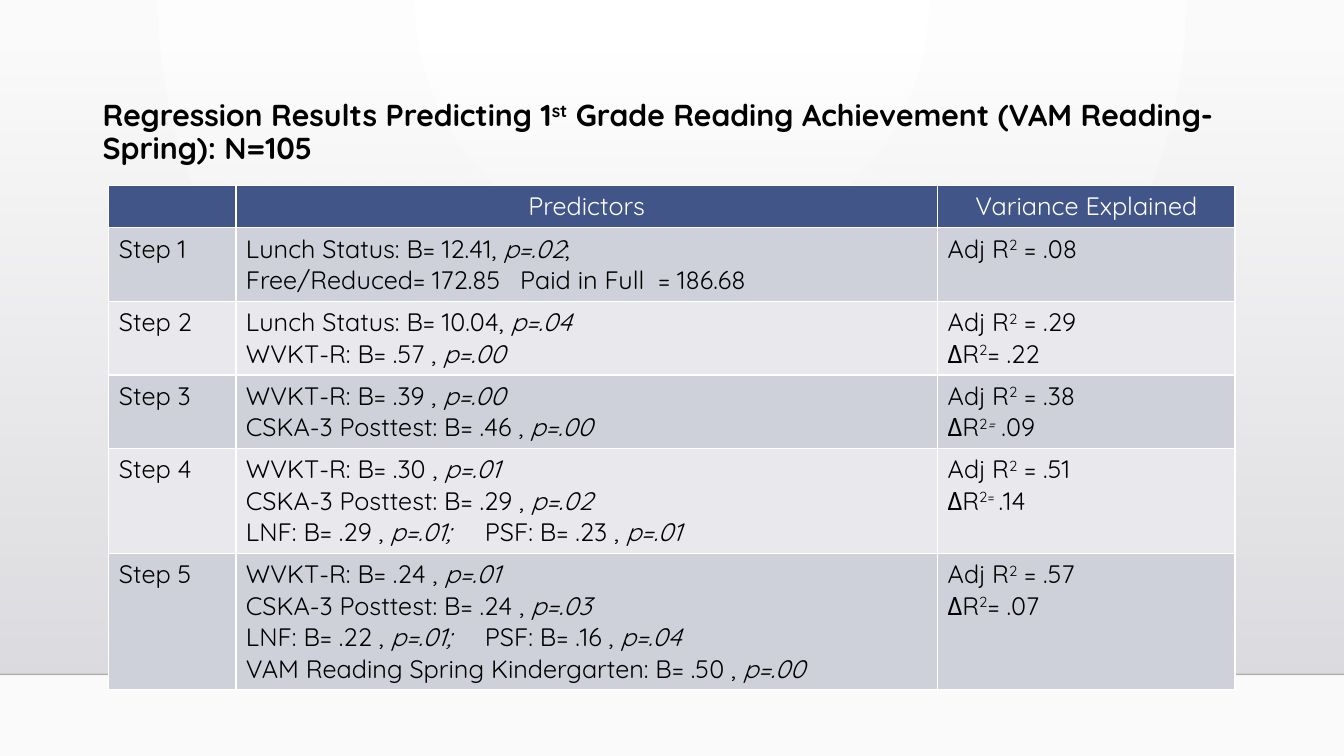
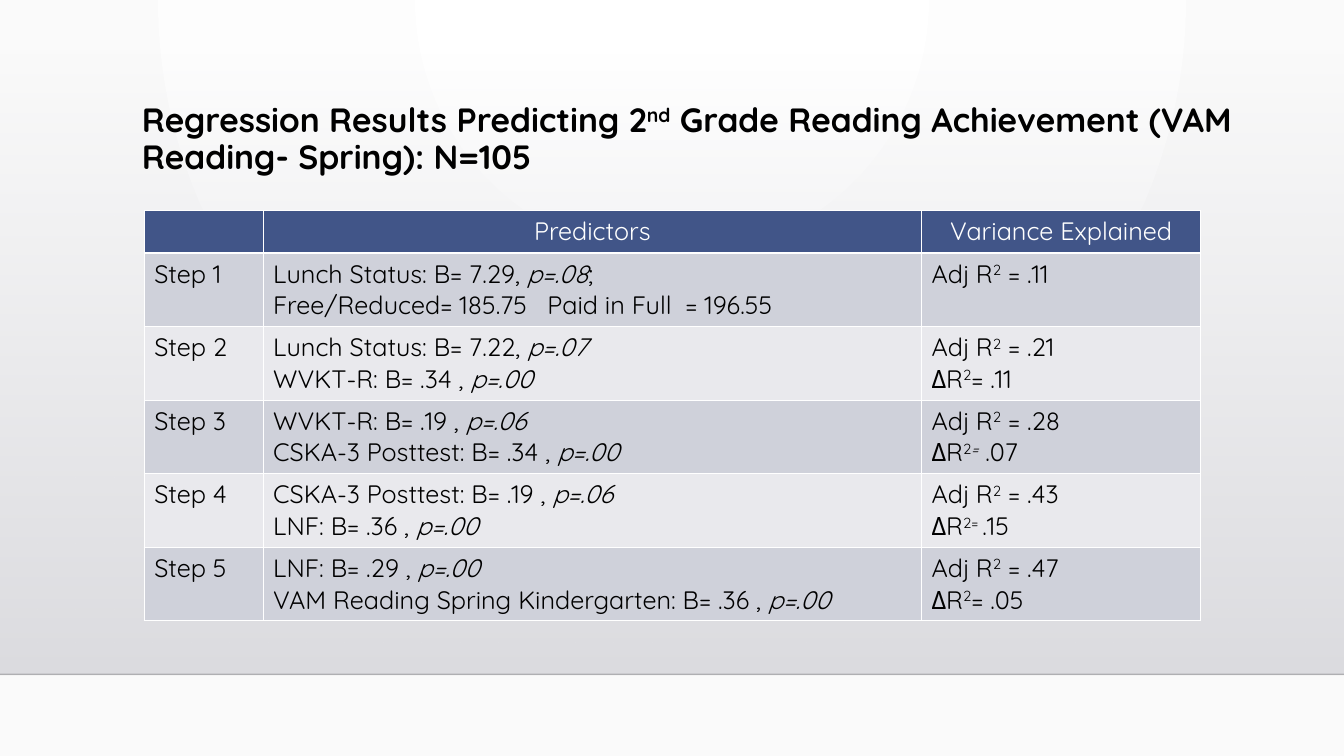
from dataclasses import dataclass

from lxml import etree
from pptx import Presentation
from pptx.dml.color import RGBColor
from pptx.dml.fill import FillFormat
from pptx.enum.shapes import MSO_CONNECTOR, MSO_SHAPE
from pptx.enum.text import MSO_ANCHOR, PP_ALIGN
from pptx.oxml.ns import qn
from pptx.slide import Slide
from pptx.table import _Cell
from pptx.text.text import TextFrame
from pptx.util import Inches, Pt

RECTANGLE = MSO_SHAPE.RECTANGLE
STRAIGHT = MSO_CONNECTOR.STRAIGHT
TOP = MSO_ANCHOR.TOP
LEFT, CENTER = PP_ALIGN.LEFT, PP_ALIGN.CENTER


@dataclass(frozen=True)
class Theme:
    font: str = "Quicksand"
    table_size: float = 18
    text: str = "000000"
    white: str = "FFFFFF"
    background_end: str = "FAFAFA"
    band_start: str = "DCDCE0"
    band_end: str = "DEDEE2"
    floor_line: str = "000001"
    header: str = "415588"
    row_fills: tuple[str, str] = ("CFD1DA", "E9E9ED")


@dataclass(frozen=True)
class Step:
    predictors: tuple[str, ...]
    variance: tuple[str, ...]


@dataclass(frozen=True)
class ResultsSlide:
    title: str
    title_size: float
    title_left: float
    title_top: float
    table_left: float
    table_top: float
    columns: tuple[float, float, float]
    steps: tuple[Step, ...]


THEME = Theme()
SLIDE_WIDTH, SLIDE_HEIGHT = 13.33, 7.5
BAND_TOP, FLOOR = 0.51, 6.69
TITLE_WIDTH, TITLE_HEIGHT = 11.5, 0.82
CELL_PADDING, LINE_HEIGHT = 0.11, 0.31
TAB_STOPS = (2.37, 2.72)
HEADINGS = ("", "Predictors", "Variance Explained")

# In texts, *…* is italic and ^…^ is superscript.
RESULTS = (
    ResultsSlide(
        "Regression Results Predicting 1^st^ Grade Reading Achievement "
        "(VAM Reading- Spring): N=105",
        21.6, 0.92, 0.95, 1.08, 1.84, (1.26, 6.96, 2.95),
        (
            Step(("Lunch Status: B= 12.41, *p=.02*;",
                  "Free/Reduced= 172.85\tPaid in Full  = 186.68"),
                 ("Adj R^2^ = .08",)),
            Step(("Lunch Status: B= 10.04, *p=.04*", "WVKT-R: B= .57 , *p=.00*"),
                 ("Adj R^2^ = .29", "ΔR^2^= .22")),
            Step(("WVKT-R: B= .39 , *p=.00*", "CSKA-3 Posttest: B= .46 , *p=.00*"),
                 ("Adj R^2^ = .38", "ΔR^2^*^=^* .09")),
            Step(("WVKT-R: B= .30 , *p=.01*", "CSKA-3 Posttest: B= .29 , *p=.02*",
                  "LNF: B= .29 , *p=.01;*\tPSF: B= .23 , *p=.01*"),
                 ("Adj R^2^ = .51", "ΔR^2= ^.14")),
            Step(("WVKT-R: B= .24 , *p=.01*", "CSKA-3 Posttest: B= .24 , *p=.03*",
                  "LNF: B= .22 , *p=.01;*\tPSF: B= .16 , *p=.04*",
                  "VAM Reading Spring Kindergarten: B= .50 , *p=.00*"),
                 ("Adj R^2^ = .57", "ΔR^2^= .07")),
        ),
    ),
    ResultsSlide(
        "Regression Results Predicting 2^nd^ Grade Reading Achievement "
        "(VAM Reading- Spring): N=105",
        24, 1.31, 0.98, 1.43, 2.09, (1.18, 6.53, 2.77),
        (
            Step(("Lunch Status: B= 7.29, *p=.08*;",
                  "Free/Reduced= 185.75\tPaid in Full  = 196.55"),
                 ("Adj R^2^ = .11",)),
            Step(("Lunch Status: B= 7.22, *p=.07*", "WVKT-R: B= .34 , *p=.00*"),
                 ("Adj R^2^ = .21", "ΔR^2^= .11")),
            Step(("WVKT-R: B= .19 , *p=.06*", "CSKA-3 Posttest: B= .34 , *p=.00*"),
                 ("Adj R^2^ = .28", "ΔR^2^*^=^* .07")),
            Step(("CSKA-3 Posttest: B= .19 , *p=.06*", "LNF: B= .36 , *p=.00*"),
                 ("Adj R^2^ = .43", "ΔR^2= ^.15")),
            Step(("LNF: B= .29 , *p=.00*",
                  "VAM Reading Spring Kindergarten: B= .36 , *p=.00*"),
                 ("Adj R^2^ = .47", "ΔR^2^= .05")),
        ),
    ),
)


def color(value: str) -> RGBColor:
    return RGBColor.from_string(value)


def set_gradient(fill: FillFormat, start: str, end: str) -> None:
    fill.gradient()
    fill.gradient_angle = 270
    for stop, value in zip(fill.gradient_stops, (start, end)):
        stop.color.rgb = color(value)


def set_opacity(element: etree._Element, percent: int) -> None:
    """Set the opacity of the first RGB colour inside an element."""
    rgb = element.find(".//" + qn("a:srgbClr"))
    etree.SubElement(rgb, qn("a:alpha"), val=str(percent * 1000))


def add_backdrop(slide: Slide) -> None:
    set_gradient(slide.background.fill, THEME.white, THEME.background_end)
    gradient = slide.element.find(".//" + qn("a:gradFill"))
    gradient.remove(gradient.find(qn("a:lin")))
    circle = etree.SubElement(gradient, qn("a:path"))
    circle.set("path", "circle")
    etree.SubElement(circle, qn("a:fillToRect"), l="43000", t="0", r="43000", b="100000")

    band = slide.shapes.add_shape(
        RECTANGLE, 0, Inches(BAND_TOP), Inches(SLIDE_WIDTH), Inches(FLOOR - BAND_TOP))
    band.shadow.inherit = False
    band.line.fill.background()
    set_gradient(band.fill, THEME.band_start, THEME.band_end)
    set_opacity(band.element.spPr, 0)

    floor = slide.shapes.add_connector(
        STRAIGHT, 0, Inches(FLOOR), Inches(SLIDE_WIDTH), Inches(FLOOR))
    floor.line.color.rgb = color(THEME.floor_line)
    floor.line.width = Pt(1)
    properties = floor.element.spPr
    set_opacity(properties, 20)
    etree.SubElement(properties, qn("a:effectLst"))


def write_lines(frame: TextFrame, lines: tuple[str, ...], size: float,
                text_color: str = THEME.text, bold: bool = False,
                alignment: PP_ALIGN = LEFT, spacing: float = 1.0) -> None:
    """Write marked-up lines, one paragraph each."""
    for index, line in enumerate(lines):
        paragraph = frame.add_paragraph() if index else frame.paragraphs[0]
        paragraph.alignment = alignment
        paragraph.line_spacing = spacing
        if "\t" in line:
            tabs = etree.SubElement(paragraph._p.get_or_add_pPr(), qn("a:tabLst"))
            for position in TAB_STOPS:
                etree.SubElement(tabs, qn("a:tab"), pos=str(Inches(position)), algn="l")
        for italic_index, part in enumerate(line.split("*")):
            for raised_index, piece in enumerate(part.split("^")):
                if not piece:
                    continue
                run = paragraph.add_run()
                run.text = piece
                formats = {"name": THEME.font, "size": Pt(size), "bold": bold,
                           "italic": italic_index % 2 == 1}
                for name, value in formats.items():
                    setattr(run.font, name, value)
                run.font.color.rgb = color(text_color)
                if raised_index % 2:
                    run._r.get_or_add_rPr().set("baseline", "30000")


def style_cell(cell: _Cell, fill: str) -> None:
    properties = cell._tc.get_or_add_tcPr()
    for side in ("lnL", "lnR", "lnT", "lnB"):
        border = etree.SubElement(properties, qn(f"a:{side}"), w=str(Pt(1)))
        solid = etree.SubElement(border, qn("a:solidFill"))
        etree.SubElement(solid, qn("a:srgbClr"), val=THEME.white)
    cell.fill.solid()
    cell.fill.fore_color.rgb = color(fill)
    cell.vertical_anchor = TOP


def add_title(slide: Slide, results: ResultsSlide) -> None:
    box = slide.shapes.add_textbox(
        Inches(results.title_left), Inches(results.title_top),
        Inches(TITLE_WIDTH), Inches(TITLE_HEIGHT))
    box.text_frame.word_wrap = True
    write_lines(box.text_frame, (results.title,), results.title_size,
                bold=True, spacing=0.9)


def add_results_table(slide: Slide, results: ResultsSlide) -> None:
    line_counts = [1] + [len(step.predictors) for step in results.steps]
    heights = [CELL_PADDING + LINE_HEIGHT * count for count in line_counts]
    table = slide.shapes.add_table(
        len(heights), len(HEADINGS), Inches(results.table_left), Inches(results.table_top),
        Inches(sum(results.columns)), Inches(sum(heights))).table
    table.first_row = table.horz_banding = False
    for column, width in zip(table.columns, results.columns):
        column.width = Inches(width)
    for row, height in zip(table.rows, heights):
        row.height = Inches(height)

    for column_index, heading in enumerate(HEADINGS):
        cell = table.cell(0, column_index)
        style_cell(cell, THEME.header)
        write_lines(cell.text_frame, (heading,), THEME.table_size, THEME.white,
                    alignment=CENTER)
    for number, step in enumerate(results.steps, start=1):
        contents = ((f"Step {number}",), step.predictors, step.variance)
        for column_index, lines in enumerate(contents):
            cell = table.cell(number, column_index)
            style_cell(cell, THEME.row_fills[(number - 1) % 2])
            write_lines(cell.text_frame, lines, THEME.table_size)


def main() -> None:
    presentation = Presentation()
    presentation.slide_width = Inches(SLIDE_WIDTH)
    presentation.slide_height = Inches(SLIDE_HEIGHT)
    blank_layout = presentation.slide_layouts[6]
    for results in RESULTS:
        slide = presentation.slides.add_slide(blank_layout)
        add_backdrop(slide)
        add_title(slide, results)
        add_results_table(slide, results)
    presentation.save("out.pptx")


if __name__ == "__main__":
    main()
